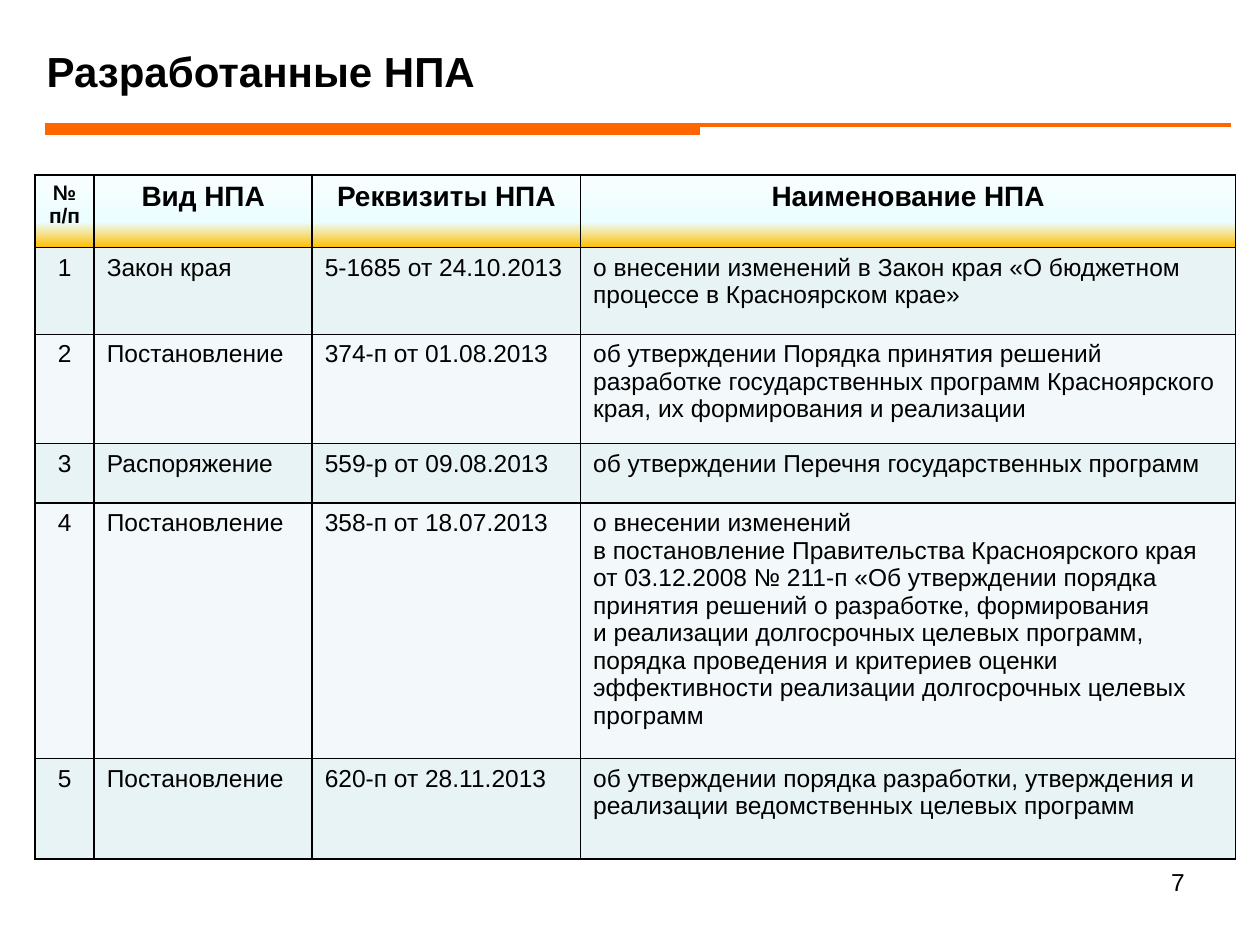
import pptx
import pptx.util
import pptx.dml.color
import pptx.enum.shapes
import pptx.enum.text
import pptx.oxml
import pptx.oxml.ns
from lxml import etree

Pt = pptx.util.Pt
ALIGN = pptx.enum.text.PP_ALIGN
ANCHOR = pptx.enum.text.MSO_ANCHOR
NS = pptx.oxml.ns.nsdecls("a")

COLORS = {
    "text": "000000",
    "border": "000000",
    "rule": "FF6600",
    "odd_row": "E7F3F4",
    "even_row": "F3F9FA",
}
HEADER_STOPS = [(0, "FFC000"), (35, "ECFDFF"), (100, "F8FEFF")]
COLUMN_WIDTHS = [33.84, 124.56, 153.36, 374.4]
ROW_HEIGHTS = [41.5, 49.5, 62.5, 34, 146, 57.5]
HEADINGS = ["№ п/п", "Вид НПА", "Реквизиты НПА", "Наименование НПА"]
ACTS = [
    ("Закон края", "5-1685 от 24.10.2013",
     "о внесении изменений в Закон края «О бюджетном процессе в Красноярском крае»"),
    ("Постановление", "374-п от 01.08.2013",
     "об утверждении Порядка принятия решений разработке государственных программ "
     "Красноярского края, их формирования и реализации"),
    ("Распоряжение", "559-р от 09.08.2013",
     "об утверждении Перечня государственных программ "),
    ("Постановление", "358-п от 18.07.2013",
     "о внесении изменений \nв постановление Правительства Красноярского края \n"
     "от 03.12.2008 № 211-п «Об утверждении порядка принятия решений о разработке, "
     "формирования \nи реализации долгосрочных целевых программ, порядка проведения "
     "и критериев оценки эффективности реализации долгосрочных целевых программ"),
    ("Постановление", "620-п от 28.11.2013",
     "об утверждении порядка разработки, утверждения и реализации ведомственных "
     "целевых программ"),
]


def write(frame, text, size, bold=False, align=ALIGN.LEFT):
    """Fill the first paragraph, turning each newline into a line break."""
    paragraph = frame.paragraphs[0]
    paragraph.alignment = align
    for i, line in enumerate(text.split("\n")):
        if i:
            paragraph.add_line_break()
        run = paragraph.add_run()
        run.text = line
        run.font.name = "Arial"
        run.font.size = Pt(size)
        run.font.bold = bold
        run.font.color.rgb = pptx.dml.color.RGBColor.from_string(COLORS["text"])


def style_cell(cell, row):
    """Give the cell its row's fill and a thin border on all sides."""
    properties = cell._tc.get_or_add_tcPr()
    if row == 0:
        stops = "".join(
            f'<a:gs pos="{pos * 1000}"><a:srgbClr val="{color}"/></a:gs>'
            for pos, color in HEADER_STOPS)
        properties.append(pptx.oxml.parse_xml(
            f'<a:gradFill {NS} rotWithShape="1"><a:gsLst>{stops}</a:gsLst>'
            '<a:lin ang="16200000" scaled="0"/></a:gradFill>'))
    else:
        cell.fill.solid()
        cell.fill.fore_color.rgb = pptx.dml.color.RGBColor.from_string(
            COLORS["odd_row" if row % 2 else "even_row"])
    for i, side in enumerate(["lnL", "lnR", "lnT", "lnB"]):
        properties.insert(i, pptx.oxml.parse_xml(
            f'<a:{side} {NS} w="{Pt(1)}"><a:solidFill>'
            f'<a:srgbClr val="{COLORS["border"]}"/></a:solidFill></a:{side}>'))


presentation = pptx.Presentation()
presentation.slide_width = Pt(720)
presentation.slide_height = Pt(540)
slide = presentation.slides.add_slide(presentation.slide_layouts[5])

# Title
title = slide.shapes.title
title.left, title.top, title.width, title.height = Pt(19.5), Pt(15), Pt(680), Pt(51)
title.text_frame.vertical_anchor = ANCHOR.MIDDLE
write(title.text_frame, "Разработанные НПА", 24, bold=True)

# Double rule under the title
for start, end, y, weight in [(26, 400, 74, 6), (25.5, 703.5, 71.5, 2.25)]:
    rule = slide.shapes.add_connector(
        pptx.enum.shapes.MSO_CONNECTOR.STRAIGHT, Pt(start), Pt(y), Pt(end), Pt(y))
    rule.line.color.rgb = pptx.dml.color.RGBColor.from_string(COLORS["rule"])
    rule.line.width = Pt(weight)
    etree.SubElement(rule._element.spPr, pptx.oxml.ns.qn("a:effectLst"))

# Slide number
number = slide.shapes.add_textbox(Pt(516), Pt(492), Pt(168), Pt(37.5))
number.text_frame.word_wrap = True
write(number.text_frame, "7", 14, align=ALIGN.RIGHT)

# Table of legal acts
acts_table = slide.shapes.add_table(
    len(ROW_HEIGHTS), len(COLUMN_WIDTHS), Pt(20), Pt(100),
    Pt(sum(COLUMN_WIDTHS)), Pt(sum(ROW_HEIGHTS))).table
for column, width in zip(acts_table.columns, COLUMN_WIDTHS):
    column.width = Pt(width)
for table_row, height in zip(acts_table.rows, ROW_HEIGHTS):
    table_row.height = Pt(height)

rows = [HEADINGS] + [(str(i), *act) for i, act in enumerate(ACTS, 1)]
for r, texts in enumerate(rows):
    for c, text in enumerate(texts):
        cell = acts_table.cell(r, c)
        header = r == 0
        size = 14 if not header else 12 if c == 0 else 16
        align = ALIGN.CENTER if header or c == 0 else ALIGN.LEFT
        write(cell.text_frame, text, size, header, align)
        style_cell(cell, r)

presentation.save("out.pptx")
